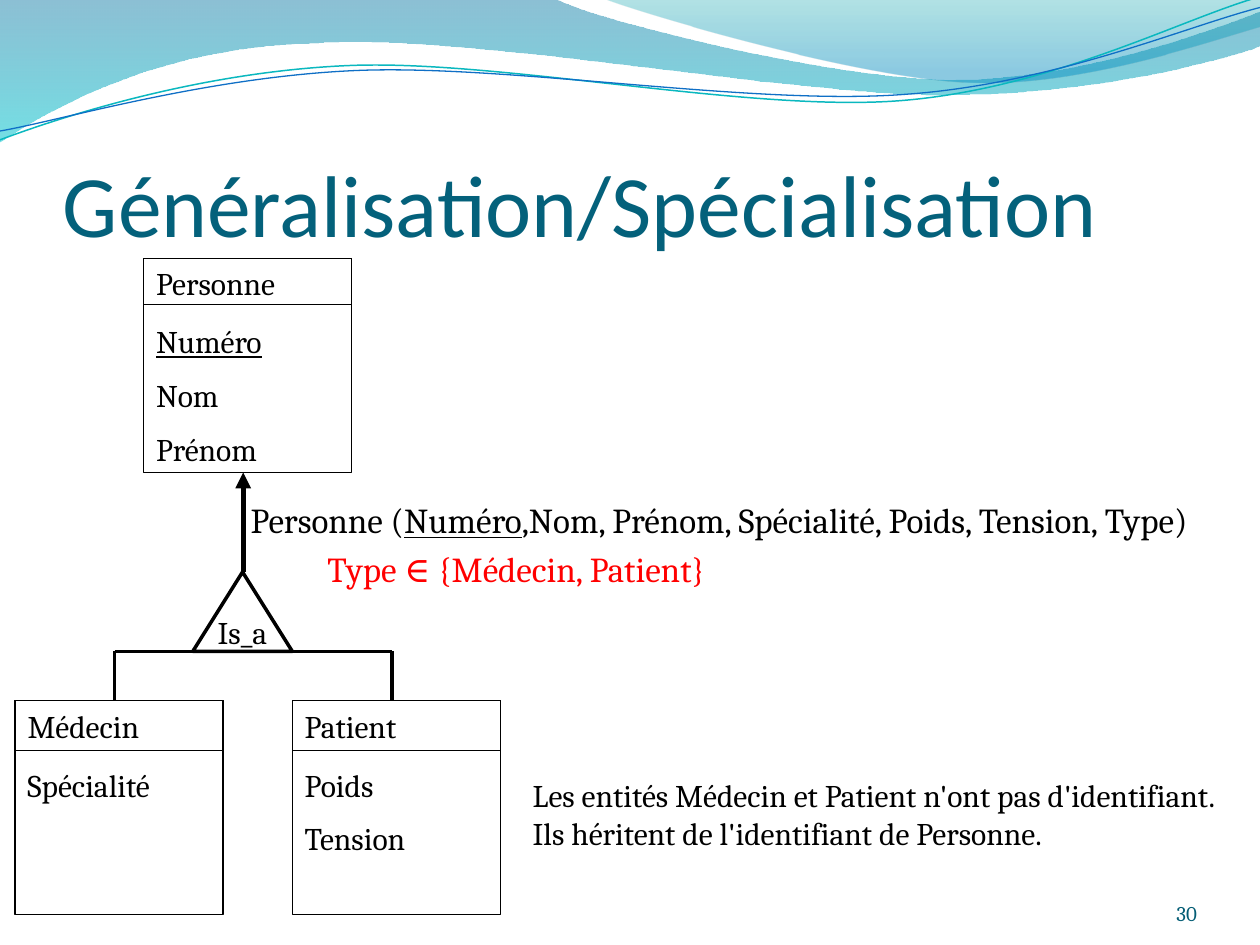
from math import cos, radians, sin

from lxml import etree
from pptx import Presentation
from pptx.dml.color import RGBColor
from pptx.enum.shapes import MSO_CONNECTOR, MSO_SHAPE
from pptx.enum.text import MSO_ANCHOR, PP_ALIGN
from pptx.oxml.ns import qn
from pptx.util import Pt

PX = 9144  # 100 px to the inch
RECT, EXTRACT = MSO_SHAPE.RECTANGLE, MSO_SHAPE.FLOWCHART_EXTRACT
STRAIGHT = MSO_CONNECTOR.STRAIGHT
TOP, MIDDLE, BOTTOM = MSO_ANCHOR.TOP, MSO_ANCHOR.MIDDLE, MSO_ANCHOR.BOTTOM
LEFT, CENTER, RIGHT = PP_ALIGN.LEFT, PP_ALIGN.CENTER, PP_ALIGN.RIGHT
COLORS = {
    "ink": "000000", "title": "04617B", "number": "045D75", "alert": "FF0000",
    "blue": "0074A1", "cyan": "00C6CF", "teal": "00A1A9", "azure": "008BBF",
    "aqua": "0AB8BF", "navy": "0F6FC6",
}


def emu(*values):
    return [round(v * PX) for v in values]


def rgb(name):
    return RGBColor.from_string(COLORS[name])


def write(shape, lines, size=18, font="Cambria", color="ink", align=LEFT,
          anchor=TOP, gap=0, wrap=True, inset=(10, 5, 10, 5)):
    """Each line is a string or a list of (text, format) runs."""
    frame = shape.text_frame
    frame.word_wrap, frame.vertical_anchor = wrap, anchor
    (frame.margin_left, frame.margin_top,
     frame.margin_right, frame.margin_bottom) = emu(*inset)
    for i, line in enumerate(lines):
        para = frame.add_paragraph() if i else frame.paragraphs[0]
        para.alignment = align
        if i:
            para.space_before = Pt(gap)
        for text, form in [(line, {})] if isinstance(line, str) else line:
            run = para.add_run()
            run.text = text
            run.font.name, run.font.size = font, Pt(size)
            run.font.color.rgb = rgb(form.get("color", color))
            if form.get("under"):
                run.font.underline = True
    return frame


def label(shapes, box, lines, **form):
    return write(shapes.add_textbox(*emu(*box)), lines, **form)


def outline(shape, color, width):
    shape.line.color.rgb = rgb(color)
    shape.line.width = Pt(width)


def frame_box(shapes, kind, box, width):
    shape = shapes.add_shape(kind, *emu(*box))
    shape.shadow.inherit = False
    shape.fill.background()
    outline(shape, "ink", width)
    return shape


def link(shapes, start, end, width, arrow=False):
    line = shapes.add_connector(STRAIGHT, *emu(*start, *end))
    outline(line, "ink", width)
    if arrow:
        etree.SubElement(line.line._get_or_add_ln(), qn("a:tailEnd"), type="triangle")
    etree.SubElement(line._element.spPr, qn("a:effectLst"))


def ribbon(shapes, steps, close=False, turn=0, pivot=(0, 0)):
    """A pair is a corner, six numbers are a cubic curve."""
    c, s = cos(radians(turn)), sin(radians(turn))
    px, py = pivot

    def spin(x, y):
        # Undo the turn, which the shape itself applies
        x, y = x - px, y - py
        return emu(px + x * c + y * s, py - x * s + y * c)

    first, *rest = [spin(*step[i:i + 2]) for step in steps
                    for i in range(0, len(step), 2)]
    build = shapes.build_freeform(*first, scale=1.0)
    build.add_line_segments(rest, close=close)
    shape = build.convert_to_shape()
    shape.shadow.inherit = False
    shape.rotation = turn

    # Join each three segments of a curve step into one cubic
    lines = iter(list(shape._element.spPr.iter(qn("a:lnTo"))))
    for step in steps[1:]:
        line = next(lines)
        if len(step) == 6:
            line.tag = qn("a:cubicBezTo")
            for _ in range(2):
                extra = next(lines)
                line.append(extra[0])
                extra.getparent().remove(extra)
    return shape


def shade(shape, stops):
    """Top to bottom gradient of (place, color, opacity) stops."""
    shape.fill.gradient()
    shape.fill.gradient_angle = 270
    for stop, (place, color, _) in zip(shape.fill.gradient_stops, stops):
        stop.position, stop.color.rgb = place, rgb(color)
    tints = shape._element.spPr.iter(qn("a:srgbClr"))
    for tint, (_, _, alpha) in zip(tints, stops):
        etree.SubElement(tint, qn("a:alpha"), val=str(alpha * 1000))
    shape.line.fill.background()


def banner(shapes, box):
    x, y, w, _ = box

    def move(steps):
        return [[v + (y if i % 2 else x) for i, v in enumerate(s)] for s in steps]

    bands = [
        ([(0, 0), (440, -1), (476, 17, 664, 63, 758, 63), (853, 63, 958, 26, w, 9),
          (w + 1, 36), (983, 44, 870, 76, 746, 75), (622, 75, 382, 28, 257, 34),
          (129, 36, 46, 83, -1, 113), (0, 0)],
         [(0, "blue", 45), (1, "cyan", 55)]),
        ([(479, -1), (509, 11, 682, 62, 769, 65), (856, 69, 961, 32, w, 21),
          (w, 0), (479, -1)],
         [(0, "teal", 30), (0.8, "azure", 45)]),
    ]
    for steps, stops in bands:
        shade(ribbon(shapes, move(steps), close=True), stops)

    waves = [
        ([(0, 111), (48, 93, 158, 57, 277, 52), (395, 47, 593, 89, 713, 80),
          (833, 71, 938, 15, 998, -2)], "aqua", 0.85, (499, 57)),
        ([(0, 104), (47, 96, 164, 61, 283, 56), (403, 51, 597, 84, 717, 75),
          (836, 67, 941, 21, w, 6)], "navy", 0.75, (500, 59)),
    ]
    group = shapes.add_group_shape().shapes
    for steps, color, width, (px, py) in waves:
        wave = ribbon(group, move(steps), turn=-2.7, pivot=(x + px, y + py))
        wave.fill.background()
        outline(wave, color, width)


def entity(shapes, box, name, fields, head=40, drop=47):
    x, y, w, h = box
    group = shapes.add_group_shape().shapes
    frame_box(group, RECT, box, 0.75)
    write(frame_box(group, RECT, (x, y, w, head), 0.75), [name])
    label(group, (x, y + drop, w - 12, 40 * len(fields)), fields, gap=9)


def tree(shapes, box):
    """Parent entity, Is_a triangle and the two child entities."""
    x, y, _, _ = box
    wide, tall = 165, 170
    mid, tip, base, low = x + 181, y + 249, y + 312, y + 351
    link(shapes, (mid, tip), (mid, y + tall), 3, arrow=True)
    sign = frame_box(shapes, EXTRACT, (mid - 40, tip, 79, base - tip), 2)
    write(sign, ["Is_a"], align=CENTER, anchor=MIDDLE, wrap=False)

    kids = [(x, "Médecin", ["Spécialité"]), (x + 220, "Patient", ["Poids", "Tension"])]
    arms = [x + 79, x + 299]
    link(shapes, (arms[0], base), (arms[1], base), 1.75)
    for arm in arms:
        link(shapes, (arm, base), (arm, low), 2)

    keys = [[("Numéro", {"under": True})], "Nom", "Prénom"]
    entity(shapes, (x + 102, y, wide, tall), "Personne", keys, head=37, drop=46)
    for left, name, fields in kids:
        entity(shapes, (left, low, wide, tall), name, fields)


def schema(shapes, box):
    lines = [
        [("Personne (", {}), ("Numéro", {"under": True}),
         (",Nom, Prénom, Spécialité, Poids, Tension, Type)", {})],
        [("Type ∈ {Médecin, Patient}", {"color": "alert"})],
    ]
    frame = label(shapes, box, lines, size=20, gap=4)
    for para, indent in zip(frame.paragraphs, (43, 104)):
        para._p.get_or_add_pPr().set("marL", str(indent * PX))


def main():
    deck = Presentation()
    deck.slide_width, deck.slide_height = emu(1000, 750)
    shapes = deck.slides.add_slide(deck.slide_layouts[6]).shapes

    banner(shapes, (0, 0, 1000, 113))
    label(shapes, (50, 77, 900, 125), ["Généralisation/Spécialisation"], size=50,
          font="Calibri", color="title", anchor=BOTTOM, inset=(0, 5, 0, 0))
    schema(shapes, (146, 391, 862, 108))
    tree(shapes, (12, 205, 385, 521))
    label(shapes, (413, 611, 567, 101),
          ["Les entités Médecin et Patient n'ont pas d'identifiant. "
           "Ils héritent de l'identifiant de Personne."])
    label(shapes, (867, 695, 83, 40), ["30"], size=12, color="number",
          align=RIGHT, anchor=BOTTOM, inset=(0, 0, 0, 0))
    deck.save("out.pptx")


if __name__ == "__main__":
    main()
